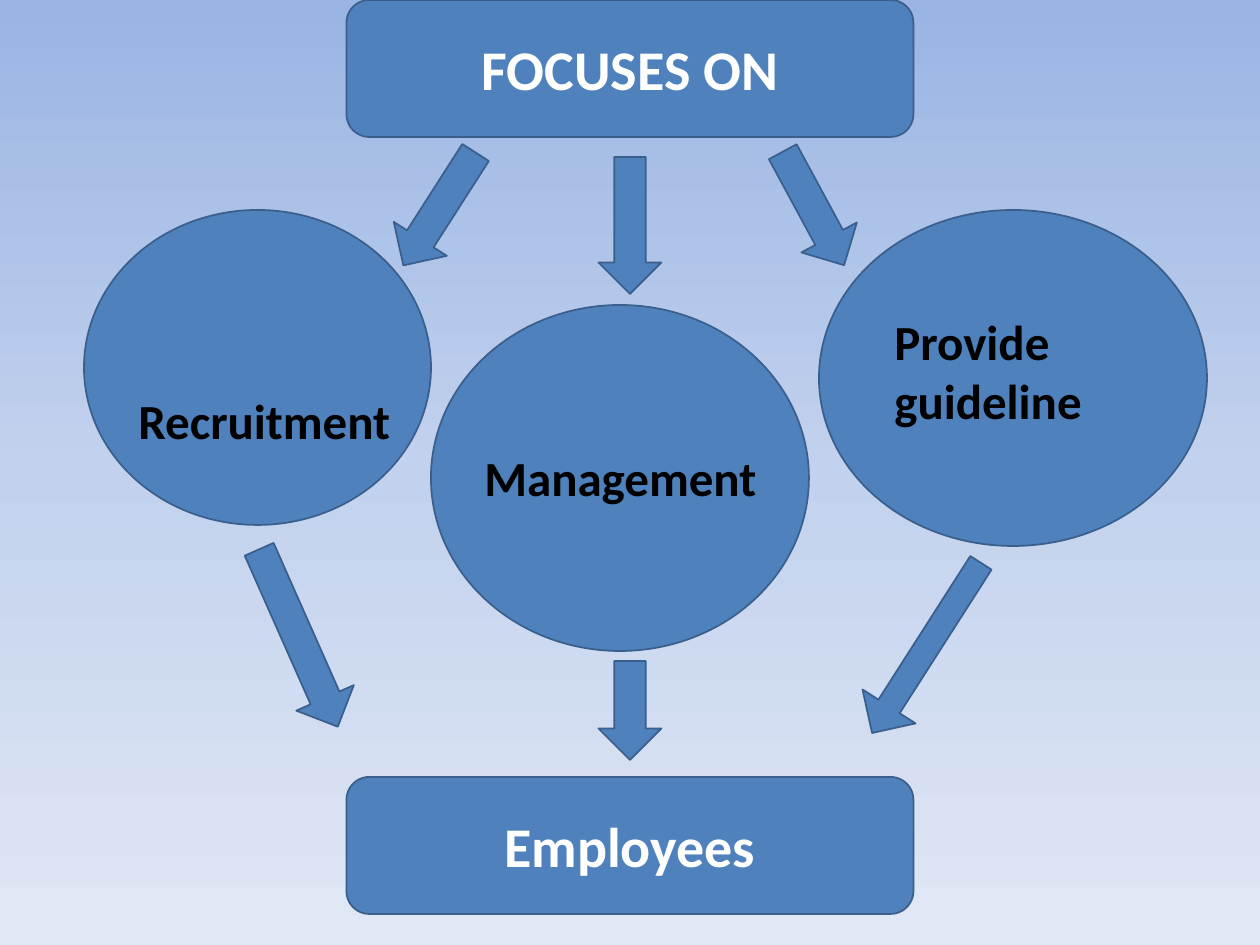
from copy import deepcopy
from dataclasses import dataclass

from pptx import Presentation
from pptx.dml.color import RGBColor
from pptx.enum.shapes import MSO_SHAPE as Shape
from pptx.enum.text import MSO_ANCHOR as Anchor, PP_ALIGN as Align
from pptx.util import Pt

EMU_PER_PX = 914400 / 126
SLIDE_WIDTH, SLIDE_HEIGHT = 1260, 945
ARROW_WIDTH = 63


@dataclass(frozen=True)
class Theme:
    font: str = "Calibri"
    fill: str = "4F81BD"
    line: str = "3A5F8C"
    box_text: str = "FFFFFF"
    topic_text: str = "000000"
    background: tuple = ((0, "9AB5E4"), (0.5, "C2D1ED"), (1, "E1E8F5"))
    box_size: int = 32
    topic_size: int = 28
    line_width: int = 1


THEME = Theme()


def px(length):
    return round(length * EMU_PER_PX)


def set_background(slide):
    """Fill the slide with a gradient running from top to bottom."""
    fill = slide.background.fill
    fill.gradient()
    fill.gradient_angle = 270
    first_stop = fill._fill._gradFill.gsLst[0]
    first_stop.addnext(deepcopy(first_stop))
    for stop, (position, color) in zip(fill.gradient_stops, THEME.background):
        stop.position = position
        stop.color.rgb = RGBColor.from_string(color)


def add_filled_shape(slide, kind, left, top, width, height):
    shape = slide.shapes.add_shape(kind, px(left), px(top), px(width), px(height))
    shape.shadow.inherit = False
    shape.fill.solid()
    shape.fill.fore_color.rgb = RGBColor.from_string(THEME.fill)
    shape.line.color.rgb = RGBColor.from_string(THEME.line)
    shape.line.width = Pt(THEME.line_width)
    return shape


def write_text(shape, text, size, color, align):
    frame = shape.text_frame
    frame.word_wrap = True
    frame.text = text
    paragraph = frame.paragraphs[0]
    paragraph.alignment = align
    font = paragraph.runs[0].font
    font.name = THEME.font
    font.size = Pt(size)
    font.bold = True
    font.color.rgb = RGBColor.from_string(color)


def add_arrow(slide, left, top, height, rotation=0, shaft=0.5):
    """Add a down arrow; shaft is the shaft's share of the arrow's width."""
    arrow = add_filled_shape(slide, Shape.DOWN_ARROW, left, top, ARROW_WIDTH, height)
    arrow.rotation = rotation
    arrow.adjustments[0] = shaft


def add_box(slide, text, top):
    width = 567
    left = (SLIDE_WIDTH - width) / 2
    box = add_filled_shape(slide, Shape.ROUNDED_RECTANGLE, left, top, width, 137)
    box.text_frame.vertical_anchor = Anchor.MIDDLE
    write_text(box, text, THEME.box_size, THEME.box_text, Align.CENTER)


def add_label(slide, text, left, top, width, height):
    label = slide.shapes.add_textbox(px(left), px(top), px(width), px(height))
    write_text(label, text, THEME.topic_size, THEME.topic_text, Align.LEFT)


def main():
    presentation = Presentation()
    presentation.slide_width = px(SLIDE_WIDTH)
    presentation.slide_height = px(SLIDE_HEIGHT)
    slide = presentation.slides.add_slide(presentation.slide_layouts[6])
    set_background(slide)

    center = (SLIDE_WIDTH - ARROW_WIDTH) / 2
    add_arrow(slide, 408, 142, 134, 32.6)
    add_arrow(slide, 782, 144, 129, 331.6)
    add_arrow(slide, center, 157, 137)

    topics = [
        ("Recruitment", (84, 210, 347, 315), (126, 384, 305, 72)),
        ("Management", (431, 305, 378, 346), (472, 441, 315, 72)),
        ("Provide guideline", (819, 210, 388, 336), (882, 305, 315, 131)),
    ]
    for text, circle, label in topics:
        add_filled_shape(slide, Shape.OVAL, *circle)
        add_label(slide, text, *label)

    add_arrow(slide, 267, 541, 194, 336.1)
    add_arrow(slide, center, 661, 99)
    add_arrow(slide, 895, 547, 202, 32.6, shaft=0.4)

    add_box(slide, "FOCUSES ON", 0)
    add_box(slide, "Employees", 777)
    presentation.save("out.pptx")


if __name__ == "__main__":
    main()
